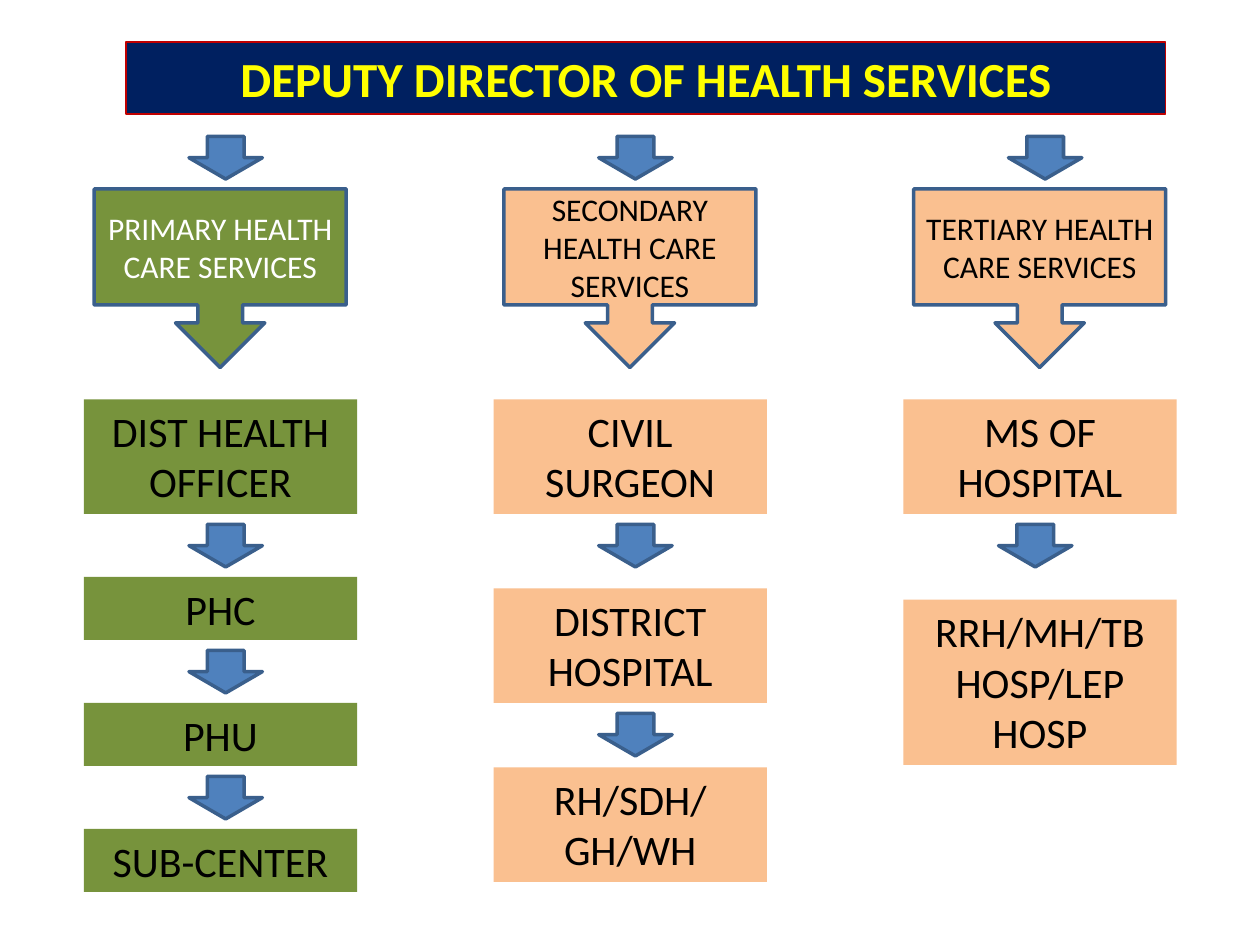
from pptx import Presentation
from pptx.dml.color import RGBColor
from pptx.enum.shapes import MSO_SHAPE as Shape
from pptx.enum.text import MSO_ANCHOR as Anchor, PP_ALIGN as Align
from pptx.util import Cm, Pt

GREEN, PEACH, BLUE, OUTLINE = "77933C", "FAC090", "4F81BD", "3A5F8C"
BLACK, WHITE = "000000", "FFFFFF"

TITLE = "DEPUTY DIRECTOR OF HEALTH SERVICES"
# Boxes: text, top in cm, number of text lines
COLUMNS = [
    {"service": "PRIMARY HEALTH CARE SERVICES", "fill": GREEN, "color": WHITE,
     "arrow_shift": 0,
     "boxes": [("DIST HEALTH OFFICER", 8.05, 2), ("PHC", 11.63, 1),
               ("PHU", 14.17, 1), ("SUB-CENTER", 16.71, 1)]},
    {"service": "SECONDARY HEALTH CARE SERVICES", "fill": PEACH, "color": BLACK,
     "arrow_shift": 0,
     "boxes": [("CIVIL SURGEON", 8.05, 2), ("DISTRICT HOSPITAL", 11.86, 2),
               ("RH/SDH/GH/WH", 15.47, 2)]},
    {"service": "TERTIARY HEALTH CARE SERVICES", "fill": PEACH, "color": BLACK,
     "arrow_shift": -0.2,
     "boxes": [("MS OF HOSPITAL", 8.05, 2),
               ("RRH/MH/TB HOSP/LEP HOSP", 12.09, 3)]},
]

# Lengths in cm
COLUMN_LEFT, COLUMN_PITCH, BOX_WIDTH = 1.69, 8.26, 5.51
CALLOUT_INDENT, ARROW_INDENT = 0.21, 2.12
ARROW_GAP = 0.21
BOX_HEIGHTS = {1: 1.27, 2: 2.31, 3: 3.33}


def rgb(value):
    return RGBColor.from_string(value)


def add_block(slide, kind, left, top, width, height, fill, line=None, line_width=2):
    shape = slide.shapes.add_shape(kind, Cm(left), Cm(top), Cm(width), Cm(height))
    shape.shadow.inherit = False
    shape.fill.solid()
    shape.fill.fore_color.rgb = rgb(fill)
    if line:
        shape.line.color.rgb = rgb(line)
        shape.line.width = Pt(line_width)
    else:
        shape.line.fill.background()
    return shape


def write(shape, text, size, color, anchor=Anchor.TOP, bold=False):
    frame = shape.text_frame
    frame.text = text
    frame.word_wrap = True
    frame.vertical_anchor = anchor
    paragraph = frame.paragraphs[0]
    paragraph.alignment = Align.CENTER
    font = paragraph.runs[0].font
    font.name, font.size, font.bold = "Calibri", Pt(size), bold
    font.color.rgb = rgb(color)


def add_arrow(slide, left, top):
    add_block(slide, Shape.DOWN_ARROW, left, top, 1.48, 0.86, BLUE, OUTLINE)


def add_column(slide, column, left):
    arrow_left = left + ARROW_INDENT
    add_arrow(slide, arrow_left, 2.75)
    callout = add_block(slide, Shape.DOWN_ARROW_CALLOUT, left + CALLOUT_INDENT,
                        3.81, 5.08, 3.6, column["fill"], OUTLINE)
    write(callout, column["service"], 18, column["color"], Anchor.MIDDLE)

    last = len(column["boxes"]) - 1
    for index, (text, top, lines) in enumerate(column["boxes"]):
        height = BOX_HEIGHTS[lines]
        box = add_block(slide, Shape.RECTANGLE, left, top, BOX_WIDTH, height,
                        column["fill"])
        write(box, text, 24, BLACK)
        if index < last:
            add_arrow(slide, arrow_left + column["arrow_shift"],
                      top + height + ARROW_GAP)


def main():
    presentation = Presentation()
    presentation.slide_width, presentation.slide_height = Cm(25.4), Cm(19.05)
    slide = presentation.slides.add_slide(presentation.slide_layouts[6])
    title = add_block(slide, Shape.RECTANGLE, 2.54, 0.85, 20.96, 1.45,
                      "002060", "C00000", 0.75)
    write(title, TITLE, 28, "FFFF00", bold=True)
    for index, column in enumerate(COLUMNS):
        add_column(slide, column, COLUMN_LEFT + index * COLUMN_PITCH)
    presentation.save("out.pptx")


if __name__ == "__main__":
    main()
